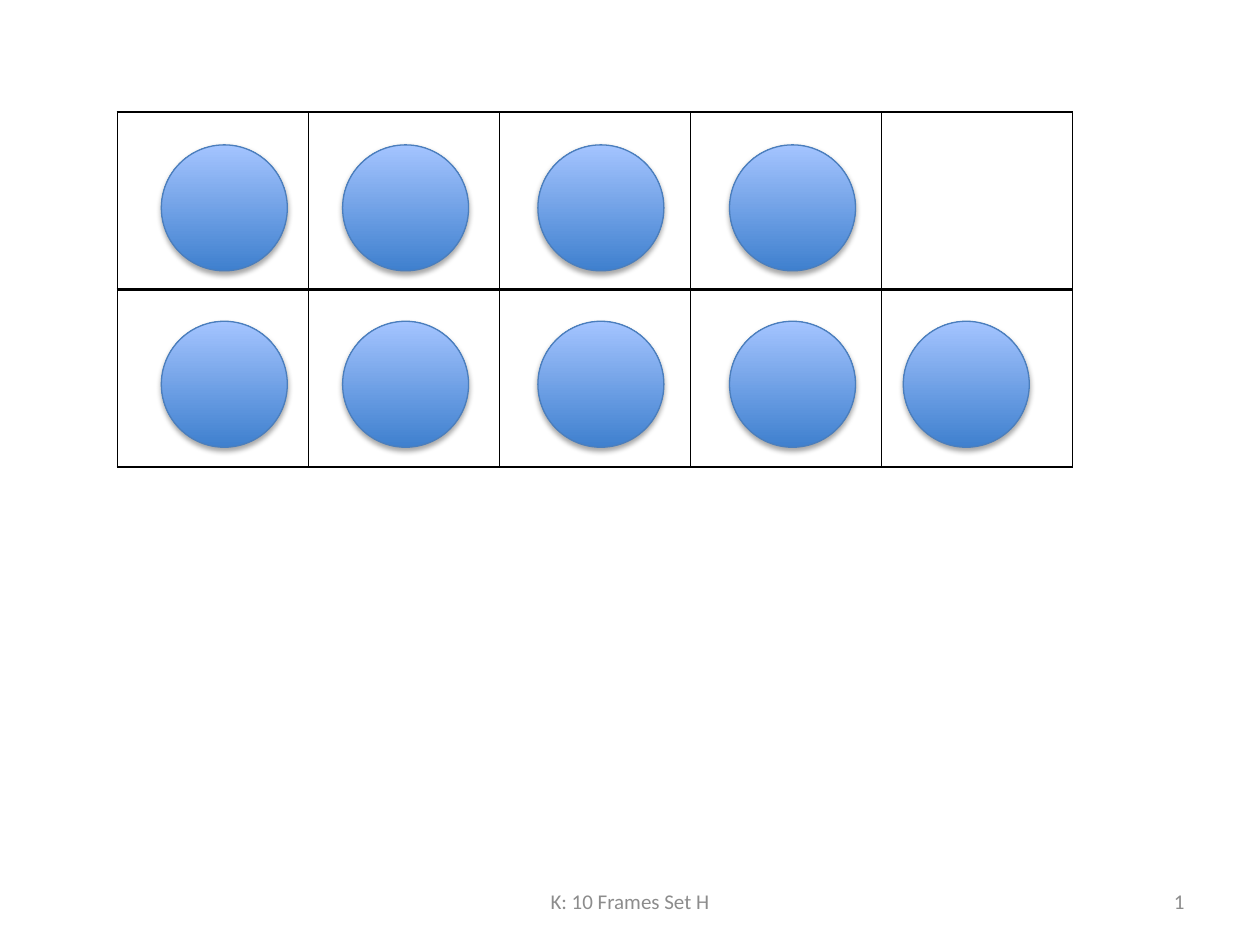
from lxml import etree
from pptx import Presentation
from pptx.dml.color import RGBColor as RGB
from pptx.enum.shapes import MSO_SHAPE as SHAPE
from pptx.enum.text import MSO_ANCHOR as ANCHOR, PP_ALIGN as ALIGN
from pptx.oxml import parse_xml
from pptx.oxml.ns import nsdecls, qn
from pptx.util import Pt

BLACK = RGB(0, 0, 0)
WHITE = RGB(255, 255, 255)
GREY = RGB(0x8C, 0x8C, 0x8C)
BLUE_DARK = RGB(0x3F, 0x80, 0xCE)
BLUE_LIGHT = RGB(0xA4, 0xC4, 0xFF)
BLUE_LINE = RGB(0x4B, 0x7E, 0xBC)

FRAME = (67, 64, 546, 203)
ROWS, COLS = 2, 5
COUNTER_SIZE = 72
COUNTER_X = (25.2, 128.8, 240.4, 349.9, 449.2)
COUNTER_Y = (18.8, 119.6)
COUNTERS_IN_ROW = (4, 5)


def add_border(cell, side, width):
    tc_pr = cell._tc.get_or_add_tcPr()
    ln = etree.SubElement(tc_pr, qn(f"a:{side}"), w=str(Pt(width)))
    fill = etree.SubElement(ln, qn("a:solidFill"))
    etree.SubElement(fill, qn("a:srgbClr"), val=str(BLACK))


def add_frame(slide, box):
    x, y, w, h = map(Pt, box)
    table = slide.shapes.add_table(ROWS, COLS, x, y, w, h).table
    table.first_row = table.horz_banding = False
    for i, row in enumerate(table.rows):
        for cell in row.cells:
            top, bottom = (1, 2) if i == 0 else (2, 1)
            for side, width in {"lnL": 1, "lnR": 1, "lnT": top, "lnB": bottom}.items():
                add_border(cell, side, width)
            cell.fill.solid()
            cell.fill.fore_color.rgb = WHITE


def add_shadow(sp):
    sp.shadow.inherit = False
    effects = sp._element.spPr.find(qn("a:effectLst"))
    effects.append(parse_xml(
        f'<a:outerShdw {nsdecls("a")} blurRad="{Pt(3.1)}" dist="{Pt(1.8)}" '
        f'dir="5400000" rotWithShape="0"><a:srgbClr val="{BLACK}">'
        '<a:alpha val="35000"/></a:srgbClr></a:outerShdw>'))


def add_counter(slide, box):
    sp = slide.shapes.add_shape(SHAPE.OVAL, *map(Pt, box))
    sp.fill.gradient()
    sp.fill.gradient_angle = 90
    for stop, color, position in zip(sp.fill.gradient_stops, (BLUE_DARK, BLUE_LIGHT), (0, 1)):
        stop.color.rgb = color
        stop.position = position
    sp.line.color.rgb = BLUE_LINE
    sp.line.width = Pt(0.75)
    add_shadow(sp)


def add_counters(slide, box):
    left, top, _, _ = box
    for y, count in zip(COUNTER_Y, COUNTERS_IN_ROW):
        for x in COUNTER_X[:count]:
            add_counter(slide, (left + x, top + y, COUNTER_SIZE, COUNTER_SIZE))


def add_footer_text(slide, box, text, align):
    tf = slide.shapes.add_textbox(*map(Pt, box)).text_frame
    tf.word_wrap = True
    tf.vertical_anchor = ANCHOR.MIDDLE
    p = tf.paragraphs[0]
    p.alignment = align
    r = p.add_run()
    r.text = text
    for name, value in {"name": "Calibri", "size": Pt(12)}.items():
        setattr(r.font, name, value)
    r.font.color.rgb = GREY


def main():
    prs = Presentation()
    prs.slide_width, prs.slide_height = Pt(720), Pt(540)
    slide = prs.slides.add_slide(prs.slide_layouts[6])
    add_frame(slide, FRAME)
    add_footer_text(slide, (246, 500.5, 228, 28.75), "K: 10 Frames Set H", ALIGN.CENTER)
    add_footer_text(slide, (516, 500.5, 168, 28.75), "1", ALIGN.RIGHT)
    add_counters(slide, FRAME)
    prs.save("out.pptx")


if __name__ == "__main__":
    main()
